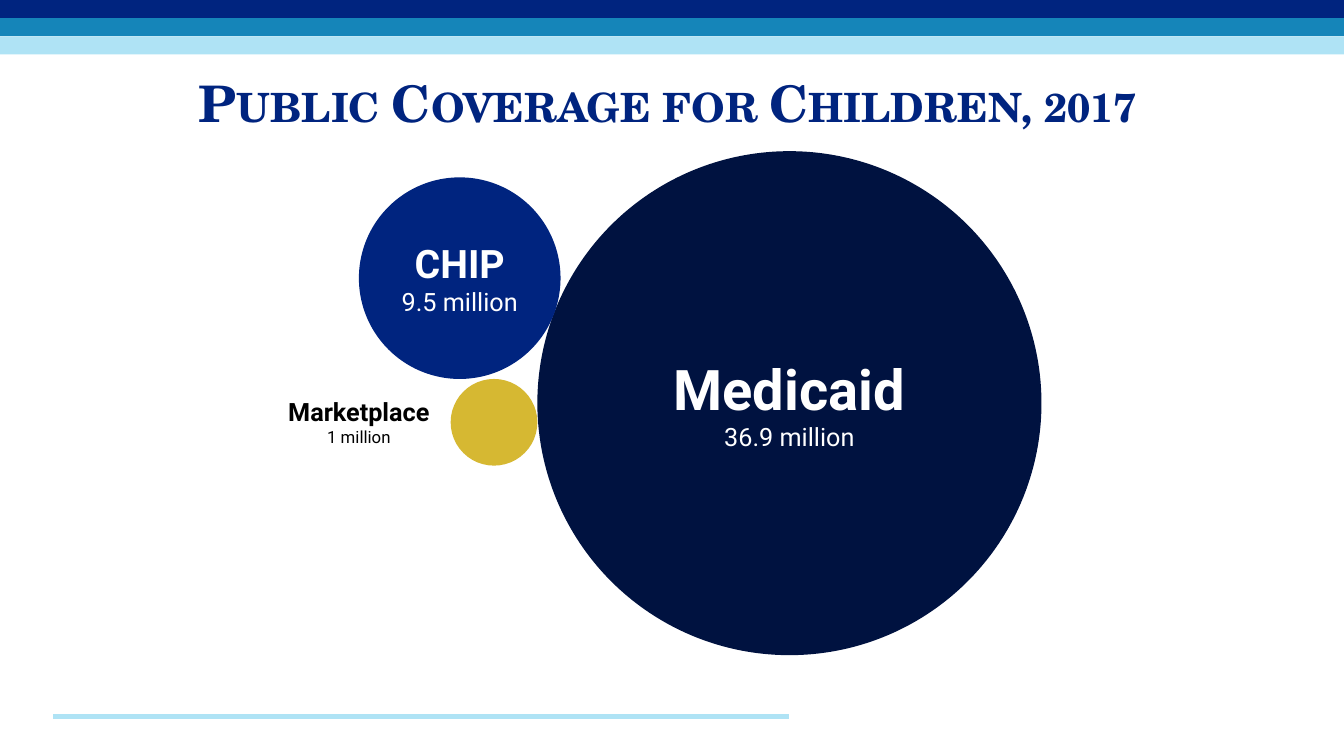
"""Build a slide comparing public coverage sources for children as bubbles."""
import dataclasses

import lxml.etree
import pptx
import pptx.dml.color
import pptx.enum.shapes
import pptx.enum.text
import pptx.oxml.ns
import pptx.util

Inches = pptx.util.Inches
Shapes = pptx.enum.shapes.MSO_SHAPE
Anchor = pptx.enum.text.MSO_ANCHOR

TITLE = "Public Coverage for Children, 2017"
BUBBLES = [
    {"name": "Medicaid", "amount": "36.9 million", "left": 5.33, "top": 1.5,
     "diameter": 5, "color": "001240", "sizes": (40, 18)},
    {"name": "CHIP", "amount": "9.5 million", "left": 3.56, "top": 1.76,
     "diameter": 2, "color": "00247F", "sizes": (28, 18)},
    {"name": "Marketplace", "amount": "1 million", "left": 4.47, "top": 3.76,
     "diameter": 0.86, "color": "D6B832", "sizes": (18, 12),
     "label_box": (1.06, 3.88, 5, 0.61)},
]


@dataclasses.dataclass(frozen=True)
class Theme:
    """Colours, fonts and sizes of the slide."""
    title_font: str = "TeX Gyre Schola"
    body_font: str = "Roboto"
    title_size: int = 36
    title_color: str = "00247F"
    light_text: str = "FFFFFF"
    dark_text: str = "000000"
    bands: tuple = ("00247F", "1585B9", "AFE3F5")
    rule_color: str = "AFE3F5"
    rule_width: int = 4


THEME = Theme()
WIDTH, HEIGHT = 13.33, 7.5
BAND_HEIGHT = 0.18


def rgb(color):
    """Turn a hex string into a colour."""
    return pptx.dml.color.RGBColor.from_string(color)


def add_run(paragraph, text, font_name, size, color, bold):
    """Append one formatted run and return it."""
    run = paragraph.add_run()
    run.text = text
    run.font.name = font_name
    run.font.size = pptx.util.Pt(size)
    run.font.bold = bold
    run.font.color.rgb = rgb(color)
    return run


def add_filled(slide, kind, box, color):
    """Add a flat preset shape without outline."""
    shape = slide.shapes.add_shape(kind, *map(Inches, box))
    shape.shadow.inherit = False
    shape.fill.solid()
    shape.fill.fore_color.rgb = rgb(color)
    shape.line.fill.background()
    return shape


def add_frame(slide):
    """Draw the top bands and the bottom rule."""
    for index, color in enumerate(THEME.bands):
        box = (0, index * BAND_HEIGHT, WIDTH, BAND_HEIGHT)
        add_filled(slide, Shapes.RECTANGLE, box, color)
    rule = slide.shapes.add_connector(
        pptx.enum.shapes.MSO_CONNECTOR.STRAIGHT,
        *map(Inches, (0.53, 7.11, 7.83, 7.11)))
    rule.line.color.rgb = rgb(THEME.rule_color)
    rule.line.width = pptx.util.Pt(THEME.rule_width)
    lxml.etree.SubElement(rule._element.spPr, pptx.oxml.ns.qn("a:effectLst"))


def add_title(slide):
    """Fill the title placeholder in small capitals."""
    title = slide.shapes.title
    title.left, title.top, title.width, title.height = map(
        Inches, (1.67, 0.66, 9.91, 0.71))
    frame = title.text_frame
    frame.word_wrap = True
    frame.auto_size = pptx.enum.text.MSO_AUTO_SIZE.NONE
    frame.vertical_anchor = Anchor.MIDDLE
    paragraph = frame.paragraphs[0]
    paragraph.alignment = pptx.enum.text.PP_ALIGN.CENTER
    run = add_run(paragraph, TITLE, THEME.title_font, THEME.title_size,
                  THEME.title_color, True)
    run.font._element.set("cap", "small")


def add_bubble(slide, bubble):
    """Add a circle and its label, inside or beside it."""
    diameter = bubble["diameter"]
    box = (bubble["left"], bubble["top"], diameter, diameter)
    holder = add_filled(slide, Shapes.OVAL, box, bubble["color"])
    color, anchor = THEME.light_text, Anchor.MIDDLE
    if "label_box" in bubble:
        holder = slide.shapes.add_textbox(*map(Inches, bubble["label_box"]))
        color, anchor = THEME.dark_text, Anchor.TOP
    frame = holder.text_frame
    frame.word_wrap = True
    frame.vertical_anchor = anchor
    lines = zip((bubble["name"], bubble["amount"]), bubble["sizes"])
    for index, (text, size) in enumerate(lines):
        paragraph = frame.add_paragraph() if index else frame.paragraphs[0]
        paragraph.alignment = pptx.enum.text.PP_ALIGN.CENTER
        add_run(paragraph, text, THEME.body_font, size, color, index == 0)


def main():
    """Assemble and save the slide."""
    presentation = pptx.Presentation()
    presentation.slide_width = Inches(WIDTH)
    presentation.slide_height = Inches(HEIGHT)
    slide = presentation.slides.add_slide(presentation.slide_layouts[5])
    add_frame(slide)
    add_title(slide)
    for bubble in BUBBLES:
        add_bubble(slide, bubble)
    presentation.save("out.pptx")


if __name__ == "__main__":
    main()
